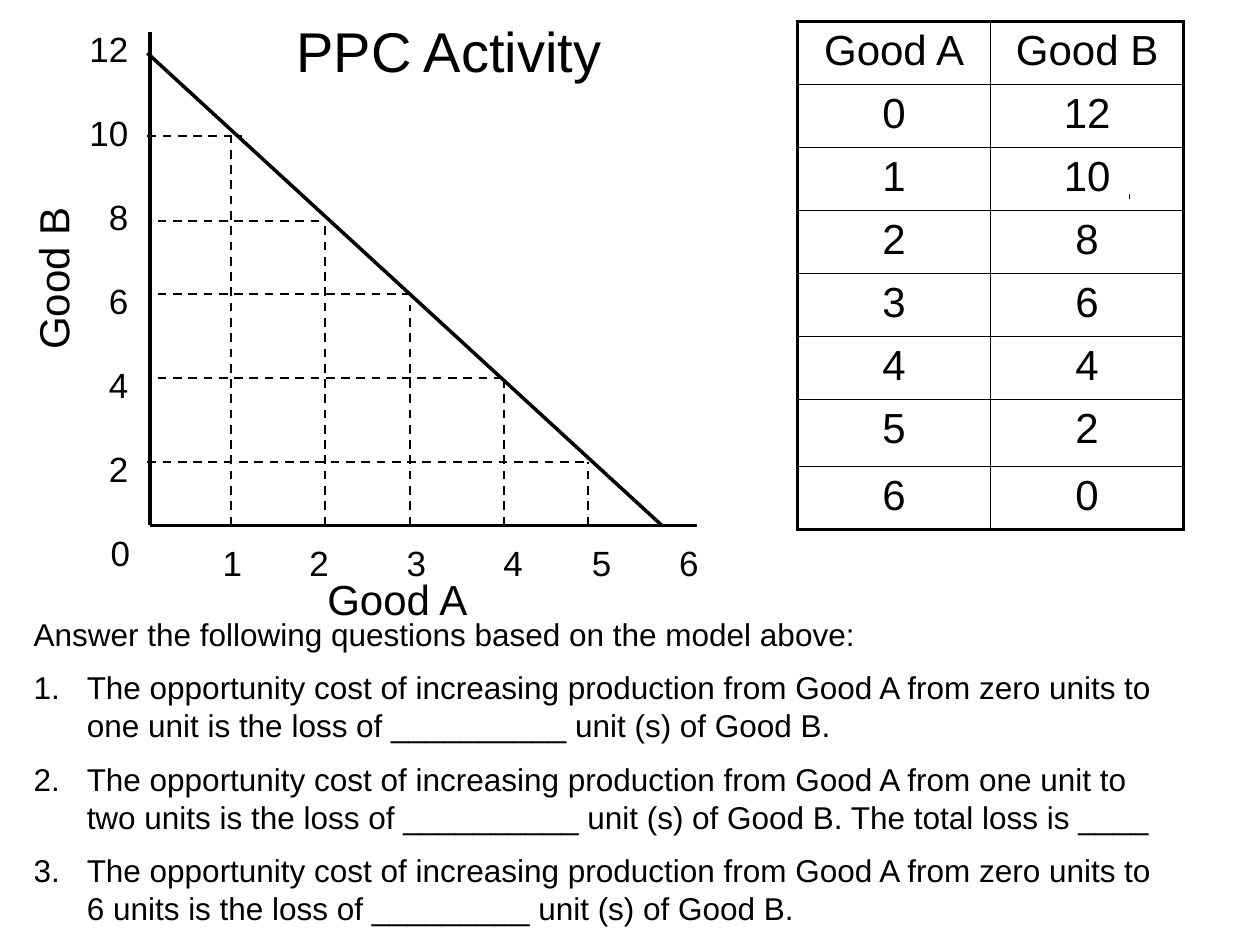
from dataclasses import dataclass

import pptx
import pptx.dml.color
import pptx.enum.dml
import pptx.enum.shapes
import pptx.enum.text
import pptx.oxml
import pptx.oxml.ns
import pptx.util
from pptx.util import Cm

COLOURS = {"ink": "000000", "mark": "4F81BD"}
FONT = "Arial"
ALIGN = pptx.enum.text.PP_ALIGN
NAMESPACE = pptx.oxml.ns.nsdecls("a")


@dataclass
class Label:
    text: str
    left: float
    top: float
    width: float
    height: float
    size: int
    align: ALIGN = ALIGN.LEFT
    rotation: int = 0


@dataclass
class Guide:
    """Dashed lines from a point on the curve to both axes."""
    start: float
    end: float
    level: float
    column: float
    top: float


def colour(name: str) -> pptx.dml.color.RGBColor:
    return pptx.dml.color.RGBColor.from_string(COLOURS[name])


def format_para(para, size: int, align=ALIGN.LEFT) -> None:
    para.alignment = align
    for span in para.runs:
        span.font.name = FONT
        span.font.size = pptx.util.Pt(size)
        span.font.color.rgb = colour("ink")


def fill_box(box, label: Label) -> None:
    box.left, box.top = Cm(label.left), Cm(label.top)
    box.width, box.height = Cm(label.width), Cm(label.height)
    box.rotation = label.rotation
    frame = box.text_frame
    frame.word_wrap = True
    frame.auto_size = pptx.enum.text.MSO_AUTO_SIZE.NONE
    frame.vertical_anchor = pptx.enum.text.MSO_ANCHOR.TOP
    frame.text = label.text
    for para in frame.paragraphs:
        format_para(para, label.size, label.align)


def add_label(page, label: Label):
    box = page.shapes.add_textbox(0, 0, 0, 0)
    fill_box(box, label)
    return box


def space_paras(box, line: float, gap: float) -> None:
    for index, para in enumerate(box.text_frame.paragraphs):
        para.line_spacing = pptx.util.Pt(line)
        para.space_before = pptx.util.Pt(gap if index else 0)


def add_line(page, x1: float, y1: float, x2: float, y2: float,
             weight: float = 2, dashed: bool = False) -> None:
    line = page.shapes.add_connector(
        pptx.enum.shapes.MSO_CONNECTOR.STRAIGHT, Cm(x1), Cm(y1), Cm(x2), Cm(y2))
    line.line.color.rgb = colour("ink")
    line.line.width = pptx.util.Pt(weight)
    if dashed:
        line.line.dash_style = pptx.enum.dml.MSO_LINE.DASH
    line._element.spPr.append(
        pptx.oxml.parse_xml(f"<a:effectLst {NAMESPACE}/>"))


def set_borders(cell, thick_sides: str) -> None:
    properties = cell._tc.get_or_add_tcPr()
    for index, side in enumerate("LRTB"):
        width = pptx.util.Pt(2.25 if side in thick_sides else 1)
        properties.insert(index, pptx.oxml.parse_xml(
            f'<a:ln{side} {NAMESPACE} w="{int(width)}"><a:solidFill>'
            f'<a:srgbClr val="{COLOURS["ink"]}"/></a:solidFill></a:ln{side}>'))


def add_schedule(page, rows: list[tuple[str, str]]) -> None:
    table = page.shapes.add_table(
        len(rows), 2, Cm(16.08), Cm(0.43), Cm(7.78), Cm(10.24)).table
    table.first_row = table.horz_banding = False
    last = len(rows) - 1
    for column in table.columns:
        column.width = Cm(3.89)
    for row_index, values in enumerate(rows):
        table.rows[row_index].height = Cm(1.35 if row_index == 6 else 1.27)
        for column_index, value in enumerate(values):
            cell = table.cell(row_index, column_index)
            cell.text = value
            format_para(cell.text_frame.paragraphs[0], 24, ALIGN.CENTER)
            cell.fill.background()
            outer = "LR"[column_index]
            outer += "T" if row_index == 0 else ""
            outer += "B" if row_index == last else ""
            set_borders(cell, outer)


def add_tabs(para, stops: list[float]) -> None:
    tabs = "".join(f'<a:tab pos="{int(Cm(stop))}" algn="l"/>' for stop in stops)
    para._p.get_or_add_pPr().append(
        pptx.oxml.parse_xml(f"<a:tabLst {NAMESPACE}>{tabs}</a:tabLst>"))


def number_questions(box) -> None:
    for index, para in enumerate(box.text_frame.paragraphs):
        properties = para._p.get_or_add_pPr()
        properties.set("marL", str(int(Cm(1.07))))
        properties.set("indent", str(int(Cm(-1.07))))
        if index:
            properties.append(pptx.oxml.parse_xml(
                f'<a:buAutoNum {NAMESPACE} type="arabicPeriod"/>'))


AXIS_X, AXIS_Y = 3.02, 10.59
GUIDES = [
    Guide(2.97, 4.88, 2.74, 4.65, 2.74),
    Guide(3.18, 6.55, 4.45, 6.55, 4.45),
    Guide(3.18, 8.26, 5.92, 8.26, 6.15),
    Guide(3.18, 10.16, 7.62, 10.16, 7.62),
    Guide(2.97, 11.86, 9.32, 11.86, 9.32),
]
SCHEDULE = [("Good A", "Good B")] + [(str(a), str(12 - 2 * a)) for a in range(7)]
QUESTIONS = [
    "Answer the following questions based on the model above:",
    "The opportunity cost of increasing production from Good A from zero units "
    "to one unit is the loss of __________ unit (s) of Good B.",
    "The opportunity cost of increasing production from Good A from one unit to "
    "two units is the loss of __________ unit (s) of Good B. The total loss is ____",
    "The opportunity cost of increasing production from Good A from zero units "
    "to 6 units is the loss of _________ unit (s) of Good B.",
]


def main() -> None:
    deck = pptx.Presentation()
    deck.slide_width, deck.slide_height = Cm(25.4), Cm(19.05)
    page = deck.slides.add_slide(deck.slide_layouts[5])
    fill_box(page.shapes.title, Label("PPC Activity", 5.72, 0.2, 7.2, 1.63, 32))

    # Axes and their labels
    add_line(page, AXIS_X, 0.64, AXIS_X, AXIS_Y)
    add_line(page, 14.05, AXIS_Y, AXIS_X, AXIS_Y)
    add_label(page, Label("Good A", 6.35, 11.43, 3.6, 1.27, 24))
    add_label(page, Label("Good B", -5.82, 4.98, 13.77, 1.27, 24, ALIGN.CENTER, 270))
    add_label(page, Label("0", 1.98, 10.59, 1, 1.12, 20))
    levels = "\n".join(str(value) for value in range(12, 0, -2))
    space_paras(add_label(
        page, Label(levels, 1.27, 0.43, 1.57, 11.25, 20, ALIGN.RIGHT)), 24, 24)
    units = add_label(page, Label(
        "\t".join(str(value) for value in range(1, 7)), 4.24, 10.8, 17.1, 1.1, 20))
    add_tabs(units.text_frame.paragraphs[0], [1.75, 3.71, 5.66, 7.44, 9.2])

    # Production possibilities curve and guides
    add_line(page, 2.97, 1.07, 13.34, AXIS_Y)
    for guide in GUIDES:
        add_line(page, guide.start, guide.level, guide.end, guide.level, 1.25, True)
        add_line(page, guide.column, AXIS_Y, guide.column, guide.top, 1.25, True)

    # Schedule and questions
    add_schedule(page, SCHEDULE)
    questions = add_label(
        page, Label("\n".join(QUESTIONS), 0.43, 12.27, 23.29, 6.7, 18))
    space_paras(questions, 21.6, 9)
    number_questions(questions)

    # Small pen mark beside the table value
    outline = page.shapes.build_freeform(Cm(22.76), Cm(3.96))
    outline.add_line_segments([(Cm(22.78), Cm(3.96))], close=True)
    mark = outline.convert_to_shape()
    mark.shadow.inherit = False
    mark.fill.solid()
    mark.fill.fore_color.rgb = colour("mark")
    mark.line.color.rgb = colour("ink")
    mark.line.width = pptx.util.Pt(3)

    deck.save("out.pptx")


if __name__ == "__main__":
    main()
